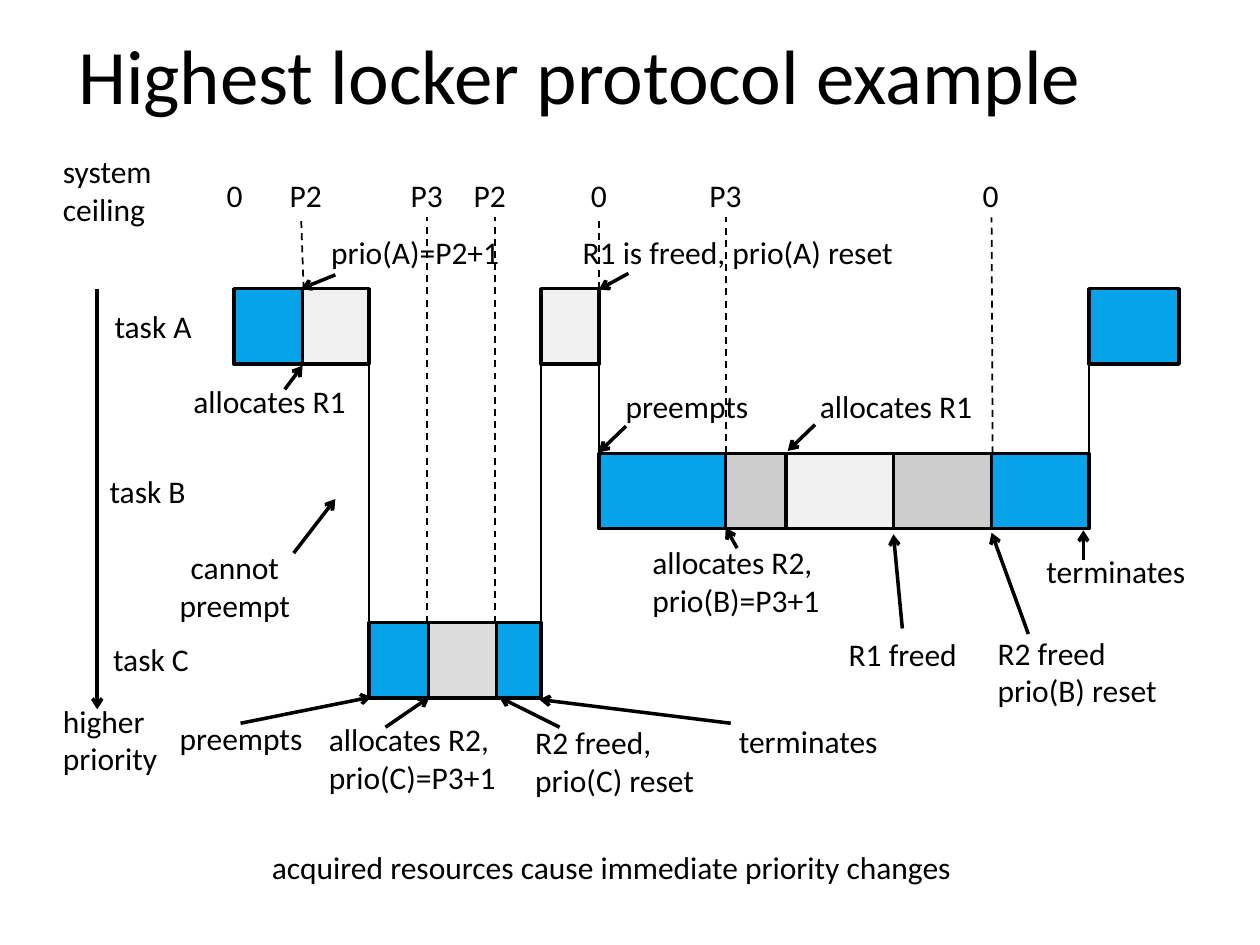
from lxml import etree
from pptx import Presentation
from pptx.dml.color import RGBColor
from pptx.enum.dml import MSO_LINE
from pptx.enum.shapes import MSO_CONNECTOR, MSO_SHAPE
from pptx.enum.text import MSO_ANCHOR, MSO_AUTO_SIZE, PP_ALIGN
from pptx.oxml.ns import qn
from pptx.util import Cm, Pt

STRAIGHT, RECTANGLE, DASH = MSO_CONNECTOR.STRAIGHT, MSO_SHAPE.RECTANGLE, MSO_LINE.DASH
LEFT, CENTER, TOP = PP_ALIGN.LEFT, PP_ALIGN.CENTER, MSO_ANCHOR.TOP
NO_FIT, GROW = MSO_AUTO_SIZE.NONE, MSO_AUTO_SIZE.SHAPE_TO_FIT_TEXT

BLACK = RGBColor(0x00, 0x00, 0x00)
BLUE = RGBColor(0x06, 0xA3, 0xEA)
LIGHT = RGBColor(0xD9, 0xD9, 0xD9)
MEDIUM = RGBColor(0xA6, 0xA6, 0xA6)
DARK = RGBColor(0x80, 0x80, 0x80)
FONT = "Calibri"
OPACITY = 39  # percent, for phases that hold a resource
THICK, THIN = 2, 1

# Content; all lengths are in centimetres
TITLE = "Highest locker protocol example"
ROW_TOP = {"A": 5.82, "B": 9.14, "C": 12.55}
ROW_HEIGHT = 1.52

# Execution runs: task, start, [(end, colour), ...]
RUNS = [
    ("A", 4.72, [(6.1, BLUE), (7.44, LIGHT)]),
    ("C", 7.44, [(8.64, BLUE), (10.01, MEDIUM), (10.91, BLUE)]),
    ("A", 10.91, [(12.08, LIGHT)]),
    ("B", 12.08, [(14.63, BLUE), (15.85, DARK), (18.01, LIGHT),
                  (19.99, DARK), (21.95, BLUE)]),
    ("A", 21.95, [(23.77, BLUE)]),
]

# Ceiling changes: text, label left, marker x at top and bottom, marked task
CEILING_TOP, MARKER_TOP = 3.43, 4.38
CEILINGS = [
    ("0", 4.32, None),
    ("P2", 5.59, (6.07, 6.12, "A")),
    ("P3", 8.03, (8.61, 8.61, "C")),
    ("P2", 9.3, (9.98, 9.98, "C")),
    ("0", 11.66, (12.07, 12.07, "A")),
    ("P3", 14.05, (14.63, 14.63, "B")),
    ("0", 19.56, (19.99, 20.01, "B")),
]
CEILING_WIDTH = {"0": 0.84, "P2": 1.17, "P3": 1.17}

# Labels: text, left, top, width, alignment
LABELS = [
    ("system\nceiling", 1.02, 2.95, 2.31, LEFT),
    ("higher\npriority", 1.02, 14.02, 2.44, LEFT),
    ("task A", 2.06, 6.07, 2.08, LEFT),
    ("task B", 1.96, 9.4, 2.06, LEFT),
    ("task C", 2.03, 12.78, 2.06, LEFT),
    ("prio(A)=P2+1", 6.4, 4.57, 3.94, CENTER),
    ("R1 is freed, prio(A) reset", 11.46, 4.57, 6.83, CENTER),
    ("allocates R1", 3.63, 7.57, 3.61, CENTER),
    ("cannot\npreempt", 3.35, 10.92, 2.77, CENTER),
    ("preempts", 12.34, 7.67, 3.02, CENTER),
    ("allocates R1", 16.26, 7.67, 3.61, CENTER),
    ("allocates R2,\nprio(B)=P3+1", 12.9, 10.82, 3.91, LEFT),
    ("R1 freed", 16.84, 12.67, 2.72, CENTER),
    ("R2 freed\nprio(B) reset", 19.86, 12.65, 3.76, LEFT),
    ("terminates", 20.83, 11, 3.33, CENTER),
    ("preempts", 3.35, 14.38, 3.02, CENTER),
    ("allocates R2,\nprio(C)=P3+1", 6.38, 14.4, 3.91, LEFT),
    ("R2 freed,\nprio(C) reset", 10.54, 14.45, 3.76, LEFT),
    ("terminates", 14.63, 14.43, 3.33, CENTER),
    ("acquired resources cause immediate priority changes", 5.23, 16.97, 14.38, LEFT),
]

# Arrows: tail x, tail y, head x, head y
ARROWS = [
    (1.96, 5.82, 1.96, 14.3),     # priority axis
    (6.76, 5.54, 6.07, 5.82),     # task A events
    (5.74, 7.85, 6.1, 7.37),
    (12.67, 5.51, 12.07, 5.84),
    (5.92, 11.15, 6.76, 10.06),   # task B events
    (12.62, 8.59, 12.07, 9.12),
    (16.43, 8.56, 15.88, 9.09),
    (14.86, 11.05, 14.63, 10.64),
    (18.19, 12.67, 18.01, 10.77),
    (20.73, 12.78, 19.99, 10.74),
    (21.84, 11.28, 21.84, 10.69),
    (4.85, 14.58, 7.49, 14.05),   # task C events
    (7.77, 14.66, 8.66, 14.05),
    (11.28, 14.66, 10.06, 14.05),
    (14.73, 14.58, 10.87, 14.1),
]


def write(frame, text, size, align):
    settings = {"word_wrap": False, "vertical_anchor": TOP}
    for name, value in settings.items():
        setattr(frame, name, value)
    frame.text = text
    font_format = {"name": FONT, "size": Pt(size)}
    for paragraph in frame.paragraphs:
        paragraph.alignment = align
        for name, value in font_format.items():
            setattr(paragraph.font, name, value)
        paragraph.font.color.rgb = BLACK


def add_label(slide, text, left, top, width, align):
    height = 1.02 if "\n" not in text else 1.8
    label = slide.shapes.add_textbox(Cm(left), Cm(top), Cm(width), Cm(height))
    write(label.text_frame, text, 18, align)
    label.text_frame.auto_size = GROW


def add_line(slide, x1, y1, x2, y2, width=THIN, dash=None, arrow=False):
    connector = slide.shapes.add_connector(STRAIGHT, Cm(x1), Cm(y1), Cm(x2), Cm(y2))
    connector.line.width = Pt(width)
    connector.line.color.rgb = BLACK
    if dash:
        connector.line.dash_style = dash
    properties = connector.line._get_or_add_ln()
    if arrow:
        etree.SubElement(properties, qn("a:tailEnd"), type="arrow")
    etree.SubElement(properties.getparent(), qn("a:effectLst"))


def add_phase(slide, task, start, end, color):
    phase = slide.shapes.add_shape(RECTANGLE, Cm(start), Cm(ROW_TOP[task]),
                                   Cm(end - start), Cm(ROW_HEIGHT))
    phase.shadow.inherit = False
    phase.fill.solid()
    phase.fill.fore_color.rgb = color
    if color != BLUE:
        rgb = phase.fill._xPr.find(f".//{qn('a:srgbClr')}")
        etree.SubElement(rgb, qn("a:alpha"), val=str(OPACITY * 1000))
    phase.line.color.rgb = BLACK
    phase.line.width = Pt(THICK)


def main():
    deck = Presentation()
    deck.slide_width, deck.slide_height = Cm(25.4), Cm(19.05)
    slide = deck.slides.add_slide(deck.slide_layouts[5])

    # Title
    title = slide.shapes.title
    place = {"left": 1.32, "top": 0.43, "width": 20.96, "height": 2.13}
    for name, value in place.items():
        setattr(title, name, Cm(value))
    write(title.text_frame, TITLE, 44, LEFT)
    title.text_frame.auto_size = NO_FIT

    # System ceiling values and their dashed markers
    for text, left, marker in CEILINGS:
        add_label(slide, text, left, CEILING_TOP, CEILING_WIDTH[text], LEFT)
        if marker:
            top_x, bottom_x, task = marker
            add_line(slide, bottom_x, ROW_TOP[task], top_x, MARKER_TOP, dash=DASH)

    # Task phases, with a thin line at each switch to another task
    previous_task = None
    for task, start, phases in RUNS:
        if previous_task:
            upper, lower = sorted((previous_task, task))
            add_line(slide, start, ROW_TOP[lower],
                     start, ROW_TOP[upper] + ROW_HEIGHT)
        previous_task = task
        for end, color in phases:
            add_phase(slide, task, start, end, color)
            start = end

    # Event labels and arrows
    for label in LABELS:
        add_label(slide, *label)
    for arrow in ARROWS:
        add_line(slide, *arrow, width=THICK, arrow=True)

    deck.save("out.pptx")


if __name__ == "__main__":
    main()
